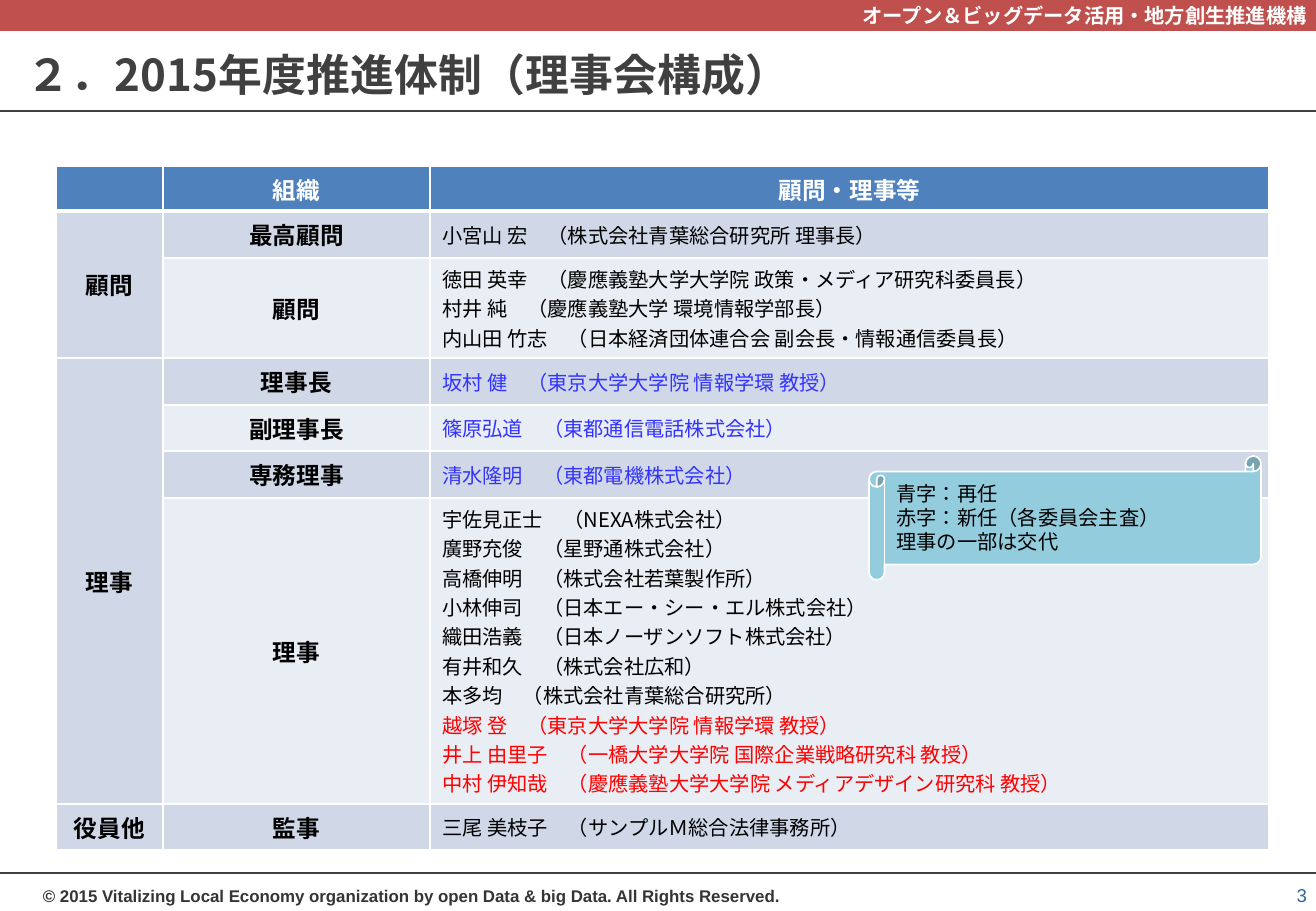
import pptx
import pptx.dml.color
import pptx.enum.lang
import pptx.enum.shapes
import pptx.enum.text
import pptx.oxml
import pptx.oxml.ns
import pptx.util
from lxml import etree

SCALE = 914400 / 121.5  # EMU in one px
WIDTH, HEIGHT = 1316, 911
GOTHIC, ARIAL = "Noto Sans CJK JP", "Arial"
COLORS = {
    "bar": "C0504D", "rule": "404040", "title": "404040", "footer": "353535",
    "number": "336699", "header": "4F81BD", "dark_band": "D0D8E8",
    "light_band": "E9EDF4", "scroll": "93CDDD", "white": "FFFFFF",
    "black": "000000", "reappointed": "3333FF", "new": "FF0000",
}
ALIGN = pptx.enum.text.PP_ALIGN
ANCHOR = pptx.enum.text.MSO_ANCHOR
SHAPE = pptx.enum.shapes.MSO_SHAPE

# (group, post, color, [(name, affiliation), ...]); an empty group continues the one above
MEMBERS = [
    ("顧問", "最高顧問", "black", [("小宮山 宏", "株式会社青葉総合研究所 理事長")]),
    ("", "顧問", "black", [
        ("徳田 英幸", "慶應義塾大学大学院 政策・メディア研究科委員長"),
        ("村井 純", "慶應義塾大学 環境情報学部長"),
        ("内山田 竹志", "日本経済団体連合会 副会長・情報通信委員長")]),
    ("理事", "理事長", "reappointed", [("坂村 健", "東京大学大学院 情報学環 教授")]),
    ("", "副理事長", "reappointed", [("篠原弘道", "東都通信電話株式会社")]),
    ("", "専務理事", "reappointed", [("清水隆明", "東都電機株式会社")]),
    ("", "理事", "black", [
        ("宇佐見正士", "NEXA株式会社"),
        ("廣野充俊", "星野通株式会社"),
        ("高橋伸明", "株式会社若葉製作所"),
        ("小林伸司", "日本エー・シー・エル株式会社"),
        ("織田浩義", "日本ノーザンソフト株式会社"),
        ("有井和久", "株式会社広和"),
        ("本多均", "株式会社青葉総合研究所"),
        ("越塚 登", "東京大学大学院 情報学環 教授"),
        ("井上 由里子", "一橋大学大学院 国際企業戦略研究科 教授"),
        ("中村 伊知哉", "慶應義塾大学大学院 メディアデザイン研究科 教授")]),
    ("役員他", "監事", "black", [("三尾 美枝子", "サンプルＭ総合法律事務所")]),
]
NEW_MEMBERS = {"越塚 登", "井上 由里子", "中村 伊知哉"}


def px(length):
    return pptx.util.Emu(round(length * SCALE))


def rgb(name):
    return pptx.dml.color.RGBColor.from_string(COLORS[name])


def write(frame, text, size=12, color="black", bold=False, font=GOTHIC,
          align=ALIGN.LEFT, spacing=None):
    """Write text into a frame, one paragraph a line; color may be a list, one a line."""
    lines = text.split("\n")
    colors = color if isinstance(color, list) else [color] * len(lines)
    for index, (line, line_color) in enumerate(zip(lines, colors)):
        paragraph = frame.add_paragraph() if index else frame.paragraphs[0]
        paragraph.alignment = align
        if spacing:
            paragraph.line_spacing = spacing
        if not line:  # an empty cell keeps the text size of its row
            end = etree.SubElement(paragraph._p, pptx.oxml.ns.qn("a:endParaRPr"))
            end.set("sz", str(size * 100))
            continue
        run = paragraph.add_run()
        run.text = line
        run.font.size = pptx.util.Pt(size)
        run.font.bold = bold
        run.font.color.rgb = rgb(line_color)
        run.font.name = font
        run.font.language_id = pptx.enum.lang.MSO_LANGUAGE_ID.JAPANESE
        east_asian = etree.SubElement(run.font._element, pptx.oxml.ns.qn("a:ea"))
        east_asian.set("typeface", font)


def set_frame(frame, anchor, horizontal, vertical):
    frame.word_wrap = True
    frame.vertical_anchor = anchor
    frame.margin_left = frame.margin_right = px(horizontal)
    frame.margin_top = frame.margin_bottom = px(vertical)


def add_text(slide, box, text, anchor=ANCHOR.TOP, insets=(9, 5), **text_format):
    shape = slide.shapes.add_textbox(*map(px, box))
    set_frame(shape.text_frame, anchor, *insets)
    write(shape.text_frame, text, **text_format)


def add_box(slide, kind, box, fill, line, line_width):
    shape = slide.shapes.add_shape(kind, *map(px, box))
    shape.shadow.inherit = False
    shape.fill.solid()
    shape.fill.fore_color.rgb = rgb(fill)
    shape.line.color.rgb = rgb(line)
    shape.line.width = pptx.util.Pt(line_width)
    return shape


def add_rule(slide, left, top, width):
    rule = slide.shapes.add_connector(
        pptx.enum.shapes.MSO_CONNECTOR.STRAIGHT,
        px(left), px(top), px(left + width), px(top))
    rule.line.color.rgb = rgb("rule")
    rule.line.width = pptx.util.Pt(1)
    etree.SubElement(rule._element.spPr, pptx.oxml.ns.qn("a:effectLst"))


def add_heading(slide, left, top, width, height):
    bar = add_box(slide, SHAPE.RECTANGLE, (left, top, width, 30), "bar", "bar", 0.75)
    set_frame(bar.text_frame, ANCHOR.MIDDLE, 9, 0)
    write(bar.text_frame, "オープン＆ビッグデータ活用・地方創生推進機構",
          color="white", bold=True, align=ALIGN.RIGHT)
    add_rule(slide, left, top + height, width)
    add_text(slide, (left + 27, top + 35, width - 102, 78),
             "２．2015年度推進体制（理事会構成）", anchor=ANCHOR.MIDDLE,
             insets=(0, 0), size=26, color="title", bold=True)


def add_footer(slide, left, top, width, height):
    add_rule(slide, left, top, width)
    add_text(slide, (left + 34, top + 8, 780, 29),
             "© 2015 Vitalizing Local Economy organization by open Data & big Data. "
             "All Rights Reserved.", size=10, color="footer", bold=True, font=ARIAL)
    add_text(slide, (left + width - 54, top + 4, 54, height - 4), "3",
             anchor=ANCHOR.BOTTOM, size=11, color="number", font=ARIAL, align=ALIGN.RIGHT)


def style_cell(cell, fill, bottom_width=1, top_width=1):
    cell.vertical_anchor = ANCHOR.MIDDLE
    properties = cell._tc.get_or_add_tcPr()
    widths = {"lnL": 1, "lnR": 1, "lnT": top_width, "lnB": bottom_width}
    for side, width in widths.items():
        properties.append(pptx.oxml.parse_xml(
            f'<a:{side} {pptx.oxml.ns.nsdecls("a")} w="{pptx.util.Pt(width)}">'
            f'<a:solidFill><a:srgbClr val="{COLORS["white"]}"/></a:solidFill></a:{side}>'))
    cell.fill.solid()
    cell.fill.fore_color.rgb = rgb(fill)


def add_member_table(slide, left, top, width, height):
    row_heights = [45, 47, 100, 47, 46, 47, 306, 46]
    column_widths = [107, 267, width - 374]
    table = slide.shapes.add_table(
        len(row_heights), len(column_widths), *map(px, (left, top, width, height))).table
    for row, row_height in zip(table.rows, row_heights):
        row.height = px(row_height)
    for column, column_width in zip(table.columns, column_widths):
        column.width = px(column_width)

    # Header row
    for column, label in enumerate(["", "組織", "顧問・理事等"]):
        cell = table.cell(0, column)
        style_cell(cell, "header", bottom_width=3)
        write(cell.text_frame, label, size=14, color="white", bold=True, align=ALIGN.CENTER)

    # Member rows
    for row, (group, post, color, people) in enumerate(MEMBERS, start=1):
        band = "dark_band" if row % 2 else "light_band"
        for column, fill in enumerate(["dark_band", band, band]):
            style_cell(table.cell(row, column), fill, top_width=3 if row == 1 else 1)
        for column, label in enumerate([group, post]):
            write(table.cell(row, column).text_frame, label,
                  size=14, bold=True, align=ALIGN.CENTER)
        write(table.cell(row, 2).text_frame,
              "\n".join(f"{name}　（{affiliation}）" for name, affiliation in people),
              color=["new" if name in NEW_MEMBERS else color for name, _ in people])

    # Group cells span down to the next group
    starts = [row for row, member in enumerate(MEMBERS, start=1) if member[0]]
    for start, following in zip(starts, starts[1:] + [len(row_heights)]):
        if following - start > 1:
            table.cell(start, 0).merge(table.cell(following - 1, 0))


def add_legend(slide, *box):
    scroll = add_box(slide, SHAPE.HORIZONTAL_SCROLL, box, "scroll", "white", 1)
    set_frame(scroll.text_frame, ANCHOR.MIDDLE, 12, 6)
    write(scroll.text_frame, "青字：再任\n赤字：新任（各委員会主査）\n理事の一部は交代",
          spacing=pptx.util.Pt(14.2))


def main():
    presentation = pptx.Presentation()
    presentation.slide_width, presentation.slide_height = px(WIDTH), px(HEIGHT)
    slide = presentation.slides.add_slide(presentation.slide_layouts[6])
    add_heading(slide, 0, 0, WIDTH, 111)
    add_footer(slide, 0, 873, WIDTH, HEIGHT - 873)
    add_member_table(slide, 56, 166, 1213, 684)
    add_legend(slide, 869, 456, 392, 124)
    presentation.save("out.pptx")


if __name__ == "__main__":
    main()
